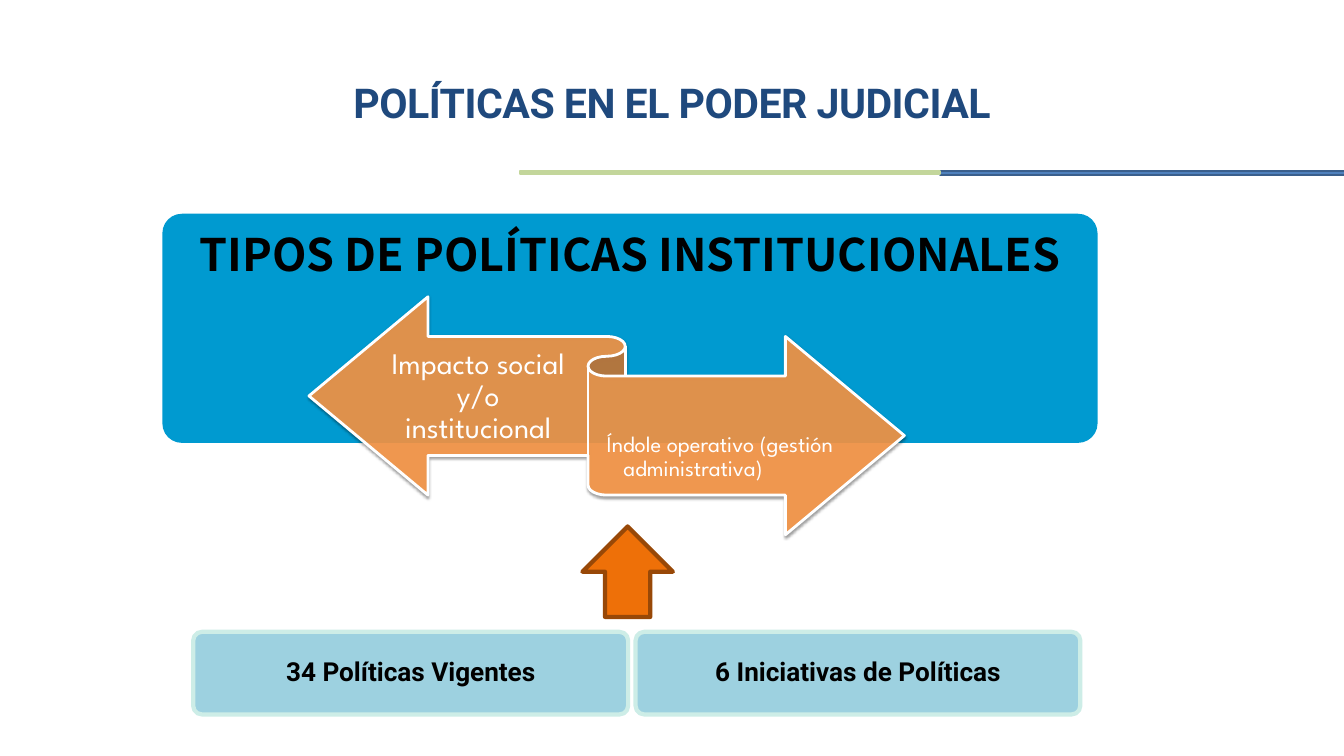
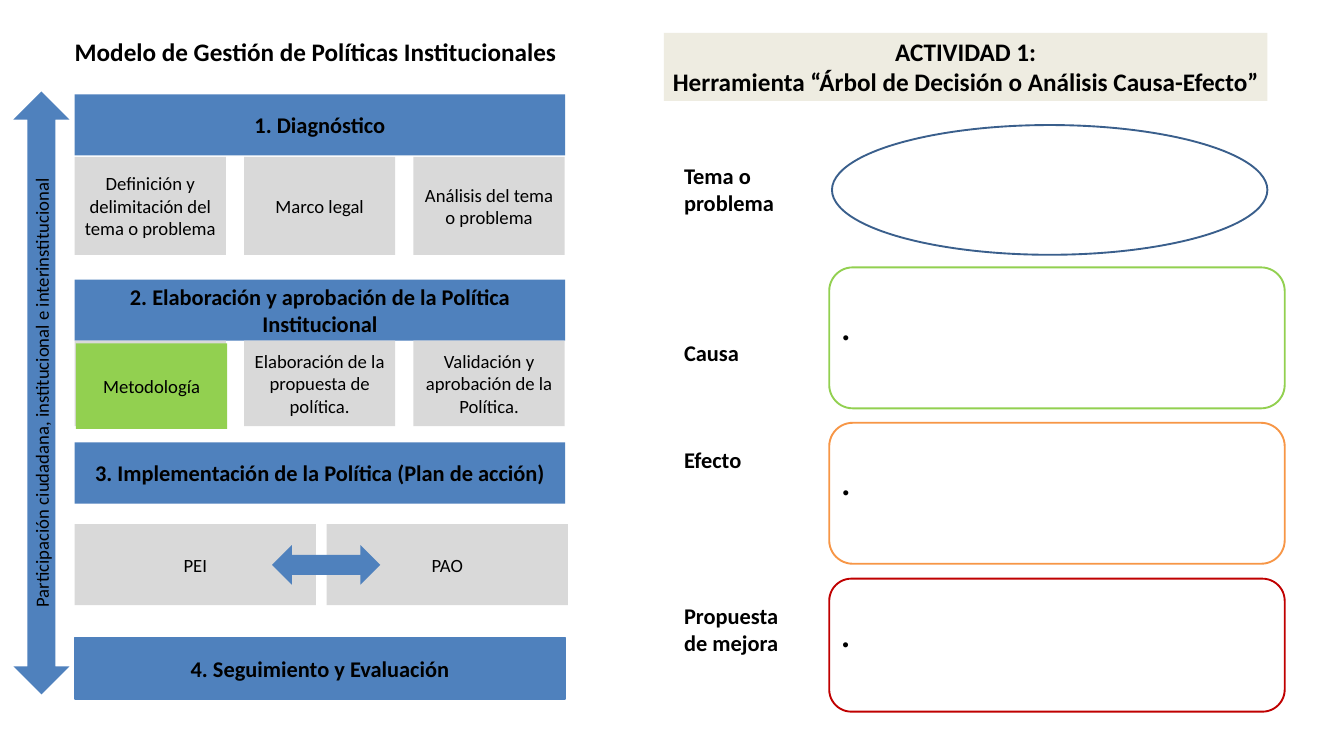
from lxml.etree import SubElement
from pptx import Presentation
from pptx.dml.color import RGBColor
from pptx.enum.shapes import MSO_SHAPE as Shape
from pptx.enum.text import MSO_ANCHOR as Anchor, PP_ALIGN as Align
from pptx.oxml.ns import qn
from pptx.util import Pt

BLACK, WHITE, NAVY = "000000", "FFFFFF", "1F497D"
BLUE, DARK_BLUE, GRAY = "4F81BD", "3A5F8C", "D9D9D9"
LIME, ORANGE, RED = "92D050", "F79646", "C00000"

BASE = {"name": "Calibri", "size": 24, "bold": False, "color": BLACK}
HEADING = {**BASE, "size": 27, "bold": True}
LABEL = {**BASE, "bold": True}
STEP = {**BASE, "size": 20}
TITLE = {**BASE, "name": "Roboto", "size": 44, "bold": True, "color": NAVY}
COUNT = {**TITLE, "size": 28, "color": BLACK}
BANNER = {**COUNT, "name": "Noto Sans CJK JP", "size": 48}
IMPACT = {**BASE, "name": "League Spartan", "size": 32, "color": WHITE}
OPERATION = {**IMPACT, "size": 24}


def rgb(value):
    return RGBColor.from_string(value)


def set_font(run, style):
    for name, value in style.items():
        if name == "color":
            run.font.color.rgb = rgb(value)
        elif name == "size":
            run.font.size = Pt(value)
        else:
            setattr(run.font, name, value)


def write(shape, text, style, align=Align.CENTER, anchor=Anchor.MIDDLE,
          insets=(7.2, 3.6, 7.2, 3.6), wrap=True, spacing=None):
    frame = shape.text_frame
    left, top, right, bottom = insets
    settings = {
        "word_wrap": wrap, "vertical_anchor": anchor,
        "margin_left": Pt(left), "margin_top": Pt(top),
        "margin_right": Pt(right), "margin_bottom": Pt(bottom),
    }
    for name, value in settings.items():
        setattr(frame, name, value)
    for index, line in enumerate(text.split("\n")):
        paragraph = frame.add_paragraph() if index else frame.paragraphs[0]
        paragraph.alignment = align
        paragraph.line_spacing = spacing
        run = paragraph.add_run()
        run.text = line
        set_font(run, style)


def add_block(slide, kind, box, fill=None, line=None, width=2, rotation=0, radius=None):
    shape = slide.shapes.add_shape(kind, *map(Pt, box))
    shape.shadow.inherit = False
    shape.rotation = rotation
    if radius:
        shape.adjustments[0] = radius
    if fill:
        shape.fill.solid()
        shape.fill.fore_color.rgb = rgb(fill)
    else:
        shape.fill.background()
    if line:
        shape.line.color.rgb = rgb(line)
        shape.line.width = Pt(width)
    else:
        shape.line.fill.background()
    return shape


def add_text(slide, box, text, style, **options):
    shape = slide.shapes.add_textbox(*map(Pt, box))
    write(shape, text, style, **options)
    return shape


def set_opacity(shape, percent):
    color = shape._element.spPr.find(qn("a:solidFill"))[0]
    SubElement(color, qn("a:alpha"), val=str(percent * 1000))


def set_shadow(shape, color, percent, blur, distance, angle):
    effects = shape._element.spPr.find(qn("a:effectLst"))
    shadow = SubElement(effects, qn("a:outerShdw"), blurRad=str(Pt(blur)),
                        dist=str(Pt(distance)), dir=str(angle * 60000), rotWithShape="0")
    shade = SubElement(shadow, qn("a:srgbClr"), val=color)
    SubElement(shade, qn("a:alpha"), val=str(percent * 1000))


def set_indent(paragraph, amount):
    properties = paragraph._p.get_or_add_pPr()
    properties.set("marL", str(Pt(amount)))
    properties.set("indent", str(-Pt(amount)))
    return properties


def add_answer_box(slide, top, height, color):
    shape = add_block(slide, Shape.ROUNDED_RECTANGLE, (888.5, top, 488, height), line=color)
    write(shape, " ", STEP, align=Align.LEFT)
    properties = set_indent(shape.text_frame.paragraphs[0], 27)
    SubElement(properties, qn("a:buFont"), typeface="Arial")
    SubElement(properties, qn("a:buChar"), char="•")


def add_step(slide, box, text, fill=GRAY):
    shape = add_block(slide, Shape.RECTANGLE, box, fill)
    if text:
        write(shape, text, STEP)


def add_ribbon(slide):
    ribbon = add_block(slide, Shape.LEFT_RIGHT_RIBBON, (331, 318, 638, 255), ORANGE, WHITE, 3)
    set_opacity(ribbon, 90)
    set_shadow(ribbon, BLACK, 38, 3.1, 1.6, 90)
    add_text(slide, (407.5, 363, 210, 125), "Impacto social y/o institucional", IMPACT,
             insets=(0, 8.6, 0, 9.4), spacing=0.9)
    operation = add_text(slide, (650, 403, 249, 125),
                         "Índole operativo (gestión administrativa)", OPERATION,
                         align=Align.LEFT, insets=(0, 59, 0, 9.4), spacing=0.9)
    set_indent(operation.text_frame.paragraphs[0], 18)


def build_policy_types(slide):
    banner = add_block(slide, Shape.ROUNDED_RECTANGLE, (174, 229, 1002, 245.5),
                       "009AD0", radius=0.085)
    write(banner, "TIPOS DE POLÍTICAS INSTITUCIONALES", BANNER, anchor=Anchor.TOP,
          insets=(14.4, 14.4, 14.4, 151), spacing=0.9)
    add_block(slide, Shape.RIGHT_ARROW, (624, 564, 97, 97), "EE7008", "984807", 4.5, 270)

    title = add_block(slide, Shape.PARALLELOGRAM, (264, 44.6, 912, 136), WHITE)
    write(title, "POLÍTICAS EN EL PODER JUDICIAL", TITLE, spacing=0.9)
    title.text_frame.paragraphs[0].runs[0]._r.get_or_add_rPr().set("spc", "-60")
    add_block(slide, Shape.RECTANGLE, (1007, 183.6, 450, 3.6), BLUE, DARK_BLUE)
    add_block(slide, Shape.RECTANGLE, (557, 183, 450, 3.6), "C3D69B", "C3D69B")

    for left, width, text in ((207, 466, "34 Políticas Vigentes"),
                              (681, 476.5, "6 Iniciativas de Políticas")):
        count = add_block(slide, Shape.ROUNDED_RECTANGLE, (left, 677, width, 88.5),
                          "93CDDD", "CDEDE7", 4.5, radius=0.105)
        set_opacity(count, 90)
        write(count, text, COUNT, insets=(8.6,) * 4, spacing=0.9)
    add_ribbon(slide)


def build_management_model(slide):
    left = 80
    add_text(slide, (43, 35, 590, 40), "Modelo de Gestión de Políticas Institucionales",
             HEADING, anchor=Anchor.TOP)
    phases = (
        (101, "1. Diagnóstico", None),
        (299.5, "2. Elaboración y aprobación de la Política Institucional", None),
        (474, "3. Implementación de la Política (Plan de acción)", None),
        (683, "4. Seguimiento y Evaluación", BLUE),
    )
    for top, text, line in phases:
        phase = add_block(slide, Shape.RECTANGLE, (left, top, 525.6, 65.5), BLUE, line)
        write(phase, text, LABEL)

    step_rows = (
        (168, 105, 162, 181.5, ("Definición y delimitación del tema o problema",
                                "Marco legal", "Análisis del tema o problema")),
        (365, 91.5, 162, 181.5, (None, "Elaboración de la propuesta de política.",
                                 "Validación y aprobación de la Política.")),
        (561.5, 87, 258.5, 270, ("PEI", "PAO")),
    )
    for top, height, width, pitch, steps in step_rows:
        for index, text in enumerate(steps):
            add_step(slide, (left + index * pitch, top, width, height), text)
    add_step(slide, (81.4, 368, 162, 91.5), "Metodología", LIME)

    add_block(slide, Shape.LEFT_RIGHT_ARROW, (291.5, 584, 116, 42.5), BLUE)
    participation = add_block(slide, Shape.LEFT_RIGHT_ARROW, (-278.6, 391, 646, 60),
                              BLUE, rotation=270)
    write(participation, "Participación ciudadana, institucional e interinstitucional", STEP)


def build_activity(slide):
    heading = add_block(slide, Shape.RECTANGLE, (711.4, 35.3, 646.5, 72.7), "EEECE1")
    write(heading, "ACTIVIDAD 1:\nHerramienta “Árbol de Decisión o Análisis Causa-Efecto”",
          HEADING, anchor=Anchor.TOP)
    add_block(slide, Shape.OVAL, (891.4, 134, 466.5, 139), line=DARK_BLUE)
    labels = (
        (170.6, 112, 65.5, "Tema o\nproblema"),
        (360, 162, 36, "Causa"),
        (474, 76, 36, "Efecto"),
        (642, 122, 65.5, "Propuesta\nde mejora"),
    )
    for top, width, height, text in labels:
        add_text(slide, (725.8, top, width, height), text, LABEL,
                 align=Align.LEFT, anchor=Anchor.TOP, wrap=False)
    for top, height, color in ((286.5, 151, LIME), (453, 151, ORANGE), (620, 142.5, RED)):
        add_answer_box(slide, top, height, color)


def main():
    presentation = Presentation()
    presentation.slide_width, presentation.slide_height = Pt(1440), Pt(810)
    blank = presentation.slide_layouts[6]
    build_policy_types(presentation.slides.add_slide(blank))
    model_slide = presentation.slides.add_slide(blank)
    build_management_model(model_slide)
    build_activity(model_slide)
    presentation.save("out.pptx")


if __name__ == "__main__":
    main()
